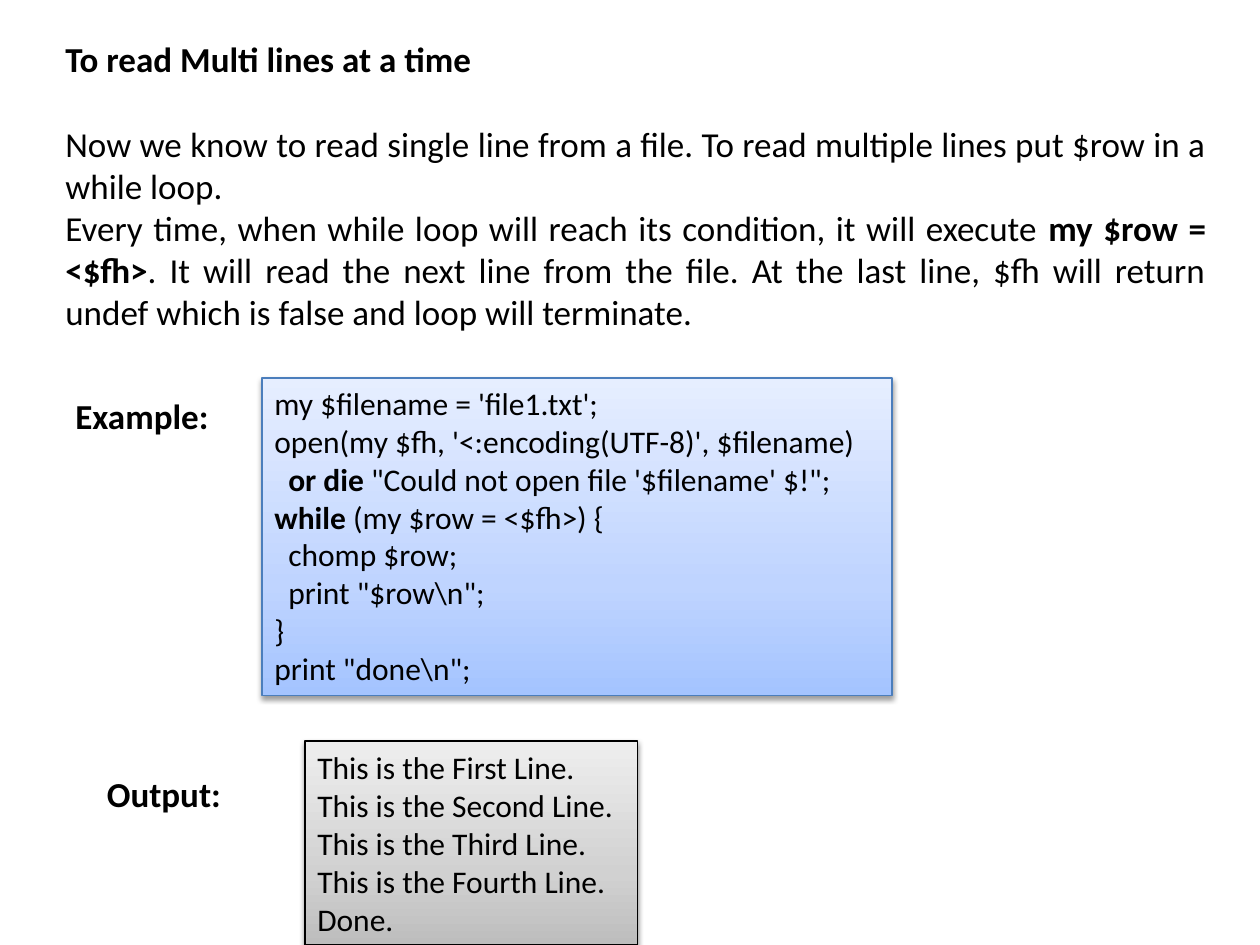
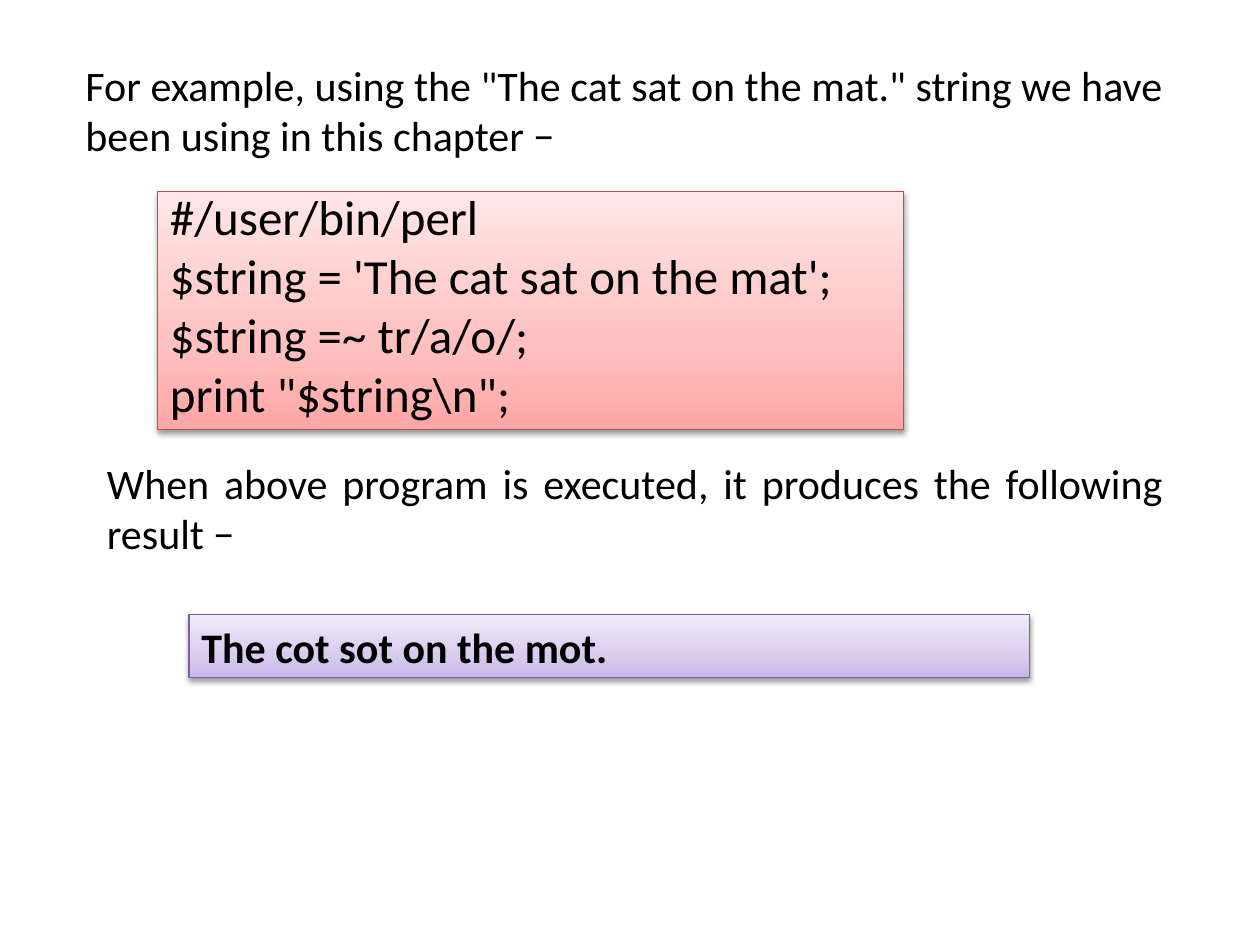
import copy

import pptx
import pptx.dml.color
import pptx.enum.shapes
import pptx.enum.text
import pptx.oxml
import pptx.oxml.ns
import pptx.util

Inches, Pt = pptx.util.Inches, pptx.util.Pt
ALIGN = pptx.enum.text.PP_ALIGN
ANCHOR = pptx.enum.text.MSO_ANCHOR
qn = pptx.oxml.ns.qn

FONT = "Calibri"
COLORS = {"text": "000000", "shadow": "000000"}
# Each panel theme: outline, then the gradient from bottom to top
PANELS = {
    "blue": {"line": "4B7EBC", "stops": ("A4C4FF", "BFD4FF", "E6EEFF")},
    "gray": {"line": "000000", "stops": ("BDBDBD", "D1D1D1", "EEEEEE")},
    "red": {"line": "BF4C48", "stops": ("FFA6A5", "FFC0BF", "FFE7E7")},
    "purple": {"line": "7D60A0", "stops": ("C9B5E8", "D8CBEE", "F0EAF9")},
}
STOP_POSITIONS = (0, 0.35, 1)
CODE_INDENT = Inches(0.11)


def rgb(value):
    return pptx.dml.color.RGBColor.from_string(value)


def inches(box):
    return [Inches(length) for length in box]


def write(frame, lines, size, align=ALIGN.LEFT, bold=False, wrap=True):
    """Fill a frame; a line is a string or a list of (text, bold) runs."""
    frame.word_wrap = wrap
    frame.auto_size = pptx.enum.text.MSO_AUTO_SIZE.SHAPE_TO_FIT_TEXT
    for number, line in enumerate(lines):
        paragraph = frame.add_paragraph() if number else frame.paragraphs[0]
        paragraph.alignment = align
        for text, is_bold in [(line, bold)] if isinstance(line, str) else line:
            run = paragraph.add_run()
            run.text = text
            run.font.name = FONT
            run.font.size = Pt(size)
            run.font.bold = is_bold
            run.font.color.rgb = rgb(COLORS["text"])
    return frame


def add_text(slide, box, lines, size, **style):
    return write(slide.shapes.add_textbox(*inches(box)).text_frame, lines, size, **style)


def fill_gradient(shape, colors):
    shape.fill.gradient()
    shape.fill.gradient_angle = 90
    stop_list = shape.fill._xPr.find(".//" + qn("a:gsLst"))
    stop_list.insert(1, copy.deepcopy(stop_list[0]))
    for stop, position, color in zip(shape.fill.gradient_stops, STOP_POSITIONS, colors):
        stop.position = position
        stop.color.rgb = rgb(color)


def drop_shadow(shape):
    shape.shadow.inherit = False
    effects = shape._element.spPr.find(qn("a:effectLst"))
    effects.append(pptx.oxml.parse_xml(
        f'<a:outerShdw {pptx.oxml.ns.nsdecls("a")} blurRad="{Pt(3.1)}" dist="{Pt(1.6)}" '
        'dir="5400000" rotWithShape="0">'
        f'<a:srgbClr val="{COLORS["shadow"]}"><a:alpha val="38000"/></a:srgbClr>'
        '</a:outerShdw>'))


def add_panel(slide, box, theme, lines, size, anchor=ANCHOR.MIDDLE, **style):
    panel = slide.shapes.add_shape(pptx.enum.shapes.MSO_SHAPE.RECTANGLE, *inches(box))
    fill_gradient(panel, PANELS[theme]["stops"])
    panel.line.color.rgb = rgb(PANELS[theme]["line"])
    panel.line.width = Pt(0.75)
    drop_shadow(panel)
    panel.text_frame.vertical_anchor = anchor
    return write(panel.text_frame, lines, size, **style)


def add_explanation(slide, box):
    explanation = add_text(slide, box, [
        [("To read Multi lines at a time", True)],
        "Now we know to read single line from a file. To read multiple lines "
        "put $row in a while loop.",
        [("Every time, when while loop will reach its condition, it will execute ", False),
         ("my $row = <$fh>", True),
         (". It will read the next line from the file. At the last line, $fh will "
          "return undef which is false and loop will terminate.", False)],
    ], 20, align=ALIGN.JUSTIFY)
    heading = explanation.paragraphs[0]
    heading.alignment = ALIGN.LEFT
    heading.space_after = Pt(24.4)


def add_file_code(slide, box):
    code = add_panel(slide, box, "blue", [
        "my $filename = 'file1.txt';",
        "open(my $fh, '<:encoding(UTF-8)', $filename)",
        [("or die", True), (" \"Could not open file '$filename' $!\";", False)],
        [("while", True), (" (my $row = <$fh>) {", False)],
        "chomp $row;",
        'print "$row\\n";',
        "}",
        'print "done\\n";',
    ], 18, anchor=ANCHOR.TOP)
    for number in (2, 4, 5):
        code.paragraphs[number]._p.get_or_add_pPr().set("marL", str(CODE_INDENT))


def build_multi_line_slide(slide):
    add_explanation(slide, (0.42, 0.25, 9.25, 2.46))
    add_file_code(slide, (2.08, 3, 5, 2.52))
    add_text(slide, (0.5, 3.08, 1.27, 0.44), ["Example:"], 20, bold=True, wrap=False)
    add_text(slide, (0.75, 6.08, 1.11, 0.44), ["Output:"], 20, bold=True, wrap=False)
    printed = [f"This is the {ordinal} Line."
               for ordinal in ("First", "Second", "Third", "Fourth")]
    add_panel(slide, (2.42, 5.88, 2.64, 1.62), "gray", printed + ["Done."], 18, wrap=False)


def build_translation_slide(slide):
    code = add_panel(slide, (1.25, 1.52, 5.92, 1.89), "red", [
        "#/user/bin/perl",
        "$string = 'The cat sat on the mat';",
        "$string =~ tr/a/o/;",
        'print "$string\\n";',
    ], 28)
    code.margin_top = Inches(-0.05)
    add_text(slide, (0.58, 0.42, 8.75, 0.91), [
        'For example, using the "The cat sat on the mat." string we have been '
        "using in this chapter −"], 24, align=ALIGN.JUSTIFY)
    add_text(slide, (0.75, 3.58, 8.58, 0.91), [
        "When above program is executed, it produces the following result −"],
        24, align=ALIGN.JUSTIFY)
    add_panel(slide, (1.5, 4.88, 6.67, 0.5), "purple",
              ["The cot sot on the mot."], 24, bold=True)


def main():
    deck = pptx.Presentation()
    deck.slide_width, deck.slide_height = Inches(10), Inches(7.5)
    for build in (build_multi_line_slide, build_translation_slide):
        build(deck.slides.add_slide(deck.slide_layouts[6]))
    deck.save("out.pptx")


if __name__ == "__main__":
    main()
